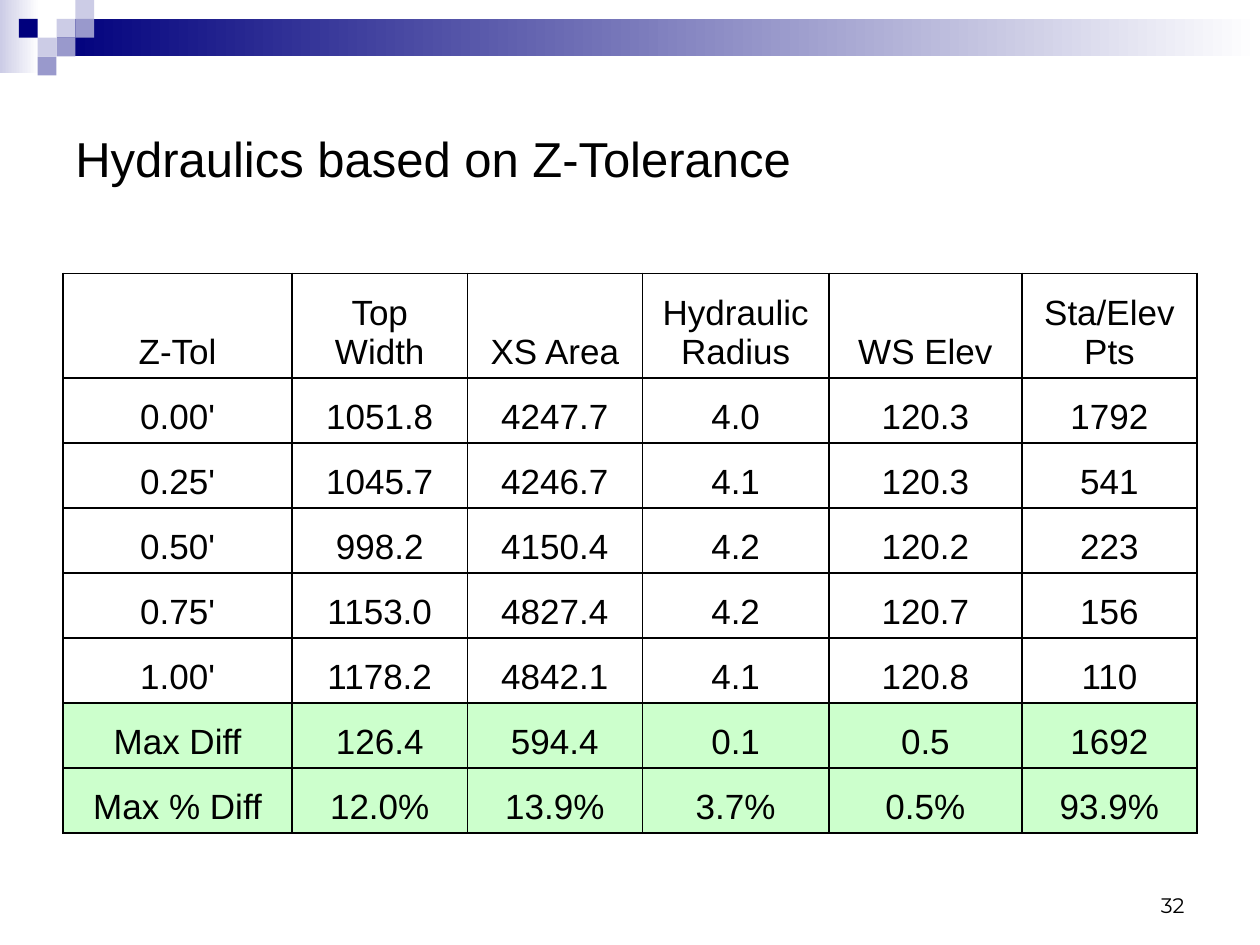
from lxml import etree
from pptx import Presentation
from pptx import util as u
from pptx.dml.color import RGBColor
from pptx.enum import shapes, text
from pptx.oxml.ns import qn

NAVY = RGBColor(0x00, 0x00, 0x7D)
MID = RGBColor(0x99, 0x99, 0xCC)
PALE = RGBColor(0xCC, 0xCC, 0xE6)
GREEN = RGBColor(0xCC, 0xFF, 0xCC)
WHITE = RGBColor(0xFF, 0xFF, 0xFF)
BLACK = RGBColor(0x00, 0x00, 0x00)

UNIT = 0.38  # side of a small square, cm
SQUARES = [  # column, row, colour
    (3, 1, PALE), (4, 0, PALE), (4, 1, MID), (2, 2, PALE),
    (1, 1, NAVY), (3, 2, MID), (2, 3, MID),
]
COLS = [4.62, 3.53, 3.53, 3.76, 3.89, 3.53]
ROWS = [2.11] + [1.31] * 7
DATA = [
    ["Z-Tol", "Top Width", "XS Area", "Hydraulic Radius", "WS Elev", "Sta/Elev Pts"],
    ["0.00'", "1051.8", "4247.7", "4.0", "120.3", "1792"],
    ["0.25'", "1045.7", "4246.7", "4.1", "120.3", "541"],
    ["0.50'", "998.2", "4150.4", "4.2", "120.2", "223"],
    ["0.75'", "1153.0", "4827.4", "4.2", "120.7", "156"],
    ["1.00'", "1178.2", "4842.1", "4.1", "120.8", "110"],
    ["Max Diff", "126.4", "594.4", "0.1", "0.5", "1692"],
    ["Max % Diff", "12.0%", "13.9%", "3.7%", "0.5%", "93.9%"],
]


def write(frame, words, size=20, font="Arial", color=BLACK,
          align=text.PP_ALIGN.LEFT):
    para = frame.paragraphs[0]
    para.alignment = align
    run = para.add_run()
    run.text = words
    run.font.size = u.Pt(size)
    run.font.name = font
    run.font.color.rgb = color


def edge(cell, color=BLACK, width=1):
    props = cell._tc.get_or_add_tcPr()
    for i, side in enumerate(("lnL", "lnR", "lnT", "lnB")):
        line = etree.Element(qn("a:" + side), w=str(u.Pt(width)))
        fill = etree.SubElement(line, qn("a:solidFill"))
        etree.SubElement(fill, qn("a:srgbClr"), val=str(color))
        props.insert(i, line)  # borders come before the fill


class Deck:
    def __init__(self):
        self.prs = Presentation()
        self.prs.slide_width = u.Cm(25.4)
        self.prs.slide_height = u.Cm(19.05)
        self.slide = self.prs.slides.add_slide(self.prs.slide_layouts[6])

    def rect(self, x, y, w, h, color, fade=None):
        box = self.slide.shapes.add_shape(
            shapes.MSO_SHAPE.RECTANGLE, u.Cm(x), u.Cm(y), u.Cm(w), u.Cm(h))
        box.shadow.inherit = False
        box.line.fill.background()
        if fade is None:
            box.fill.solid()
            box.fill.fore_color.rgb = color
            return
        box.fill.gradient()
        box.fill.gradient_angle = 0
        for stop, tone in zip(box.fill.gradient_stops, (color, fade)):
            stop.color.rgb = tone

    def label(self, x, y, w, h, words, anchor, **style):
        box = self.slide.shapes.add_textbox(u.Cm(x), u.Cm(y), u.Cm(w), u.Cm(h))
        box.text_frame.word_wrap = True
        box.text_frame.vertical_anchor = anchor
        write(box.text_frame, words, **style)

    def table(self, x, y, cols, rows, data, shaded):
        grid = self.slide.shapes.add_table(
            len(rows), len(cols), u.Cm(x), u.Cm(y),
            u.Cm(sum(cols)), u.Cm(sum(rows))).table
        for col, w in zip(grid.columns, cols):
            col.width = u.Cm(w)
        for r, (row, h) in enumerate(zip(grid.rows, rows)):
            row.height = u.Cm(h)
            for cell, words in zip(row.cells, data[r]):
                cell.vertical_anchor = text.MSO_ANCHOR.BOTTOM
                if r in shaded:
                    cell.fill.solid()
                    cell.fill.fore_color.rgb = GREEN
                else:
                    cell.fill.background()
                edge(cell)
                write(cell.text_frame, words, align=text.PP_ALIGN.CENTER)


def main():
    deck = Deck()

    # Top band with squares
    deck.rect(0, 0, 0.79, 1.47, PALE, fade=WHITE)
    deck.rect(3 * UNIT, UNIT, 25.4 - 3 * UNIT, 2 * UNIT, NAVY, fade=WHITE)
    for col, row, color in SQUARES:
        deck.rect(col * UNIT, row * UNIT, UNIT, UNIT, color)

    # Slide number and title
    deck.label(18.21, 17.35, 5.92, 1.27, "32", text.MSO_ANCHOR.BOTTOM,
               size=12, font="Montserrat", align=text.PP_ALIGN.RIGHT)
    deck.label(1.27, 1.27, 22.86, 3.81, "Hydraulics based on Z-Tolerance",
               text.MSO_ANCHOR.MIDDLE, size=28)

    # Results table, with the two summary rows shaded
    deck.table(1.27, 5.51, COLS, ROWS, DATA, shaded=(6, 7))

    deck.prs.save("out.pptx")


if __name__ == "__main__":
    main()
